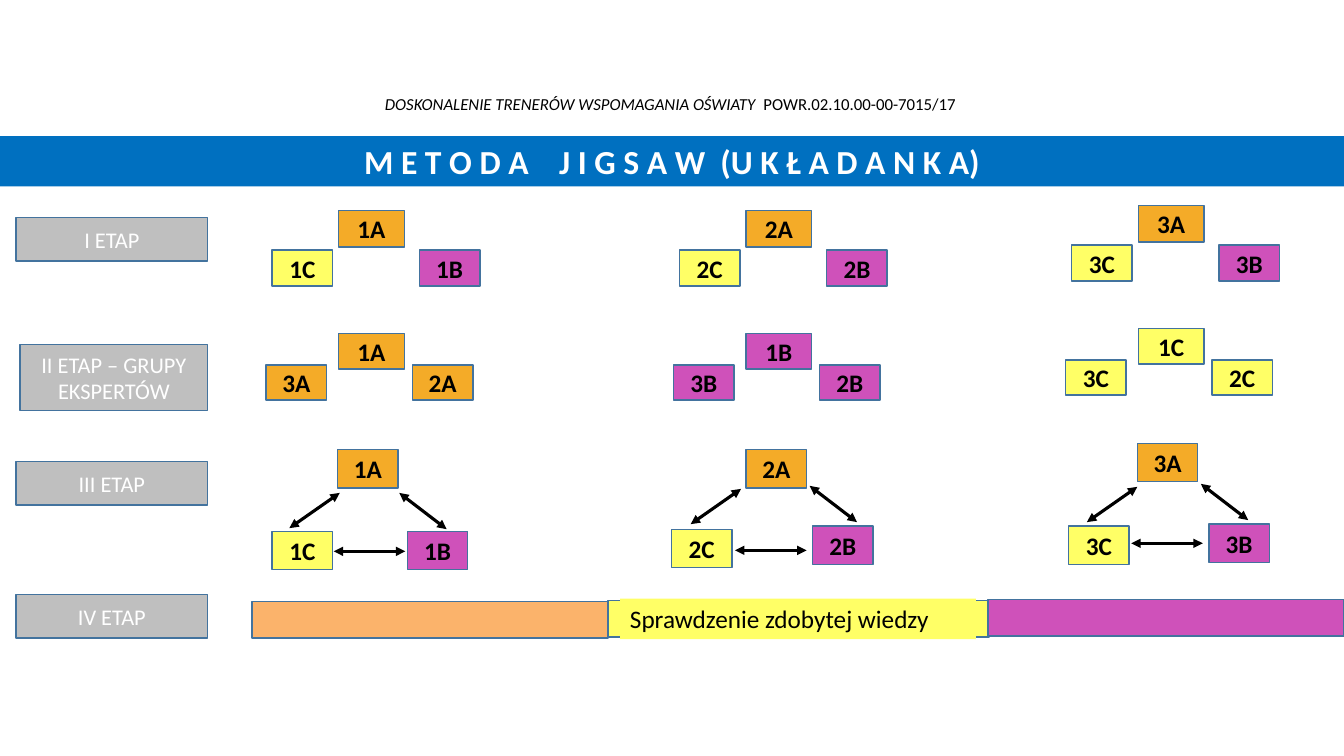
from lxml import etree
from pptx import Presentation
from pptx.dml.color import RGBColor
from pptx.enum import shapes, text
from pptx.oxml import ns
from pptx.util import Inches, Pt

BLACK = RGBColor(0x00, 0x00, 0x00)
WHITE = RGBColor(0xFF, 0xFF, 0xFF)
BLUE = RGBColor(0x00, 0x70, 0xC0)
OUTLINE = RGBColor(0x43, 0x73, 0x9E)
GREY = RGBColor(0xBF, 0xBF, 0xBF)
ORANGE = RGBColor(0xF4, 0xAB, 0x28)
PEACH = RGBColor(0xFB, 0xB3, 0x6B)
MAGENTA = RGBColor(0xCF, 0x51, 0xBA)
YELLOW = RGBColor(0xFF, 0xFF, 0x66)
LETTER_FILL = {"A": ORANGE, "B": MAGENTA, "C": YELLOW}

prs = Presentation()
prs.slide_width, prs.slide_height = Inches(13.33), Inches(7.5)
s = prs.slides.add_slide(prs.slide_layouts[6])


def add_box(x, y, w, h, fill, label="", size=18, color=BLACK, bold=False,
            outline=True, align=text.PP_ALIGN.CENTER):
    sp = s.shapes.add_shape(shapes.MSO_SHAPE.RECTANGLE, Inches(x), Inches(y), Inches(w), Inches(h))
    sp.shadow.inherit = False
    sp.fill.solid()
    sp.fill.fore_color.rgb = fill
    if outline:
        sp.line.color.rgb = OUTLINE
        sp.line.width = Pt(1)
    else:
        sp.line.fill.background()
    if label:
        tf = sp.text_frame
        tf.word_wrap = True
        tf.vertical_anchor = text.MSO_ANCHOR.MIDDLE
        tf.text = label
        p = tf.paragraphs[0]
        p.alignment = align
        f = p.runs[0].font
        f.name, f.size, f.bold, f.color.rgb = "Calibri", Pt(size), bold, color


def add_arrow(x1, y1, x2, y2):
    c = s.shapes.add_connector(shapes.MSO_CONNECTOR.STRAIGHT,
                               Inches(x1), Inches(y1), Inches(x2), Inches(y2))
    c.line.color.rgb = BLACK
    c.line.width = Pt(2.25)
    ln = c.line._get_or_add_ln()
    for end in ("a:headEnd", "a:tailEnd"):
        etree.SubElement(ln, ns.qn(end), type="triangle")
    etree.SubElement(c._element.spPr, ns.qn("a:effectLst"))


tb = s.shapes.add_textbox(Inches(0.92), Inches(0.88), Inches(11.46), Inches(0.3))
tf = tb.text_frame
tf.word_wrap = True
tf.vertical_anchor = text.MSO_ANCHOR.MIDDLE
p = tf.paragraphs[0]
p.alignment = text.PP_ALIGN.CENTER
for wording, italic in (("DOSKONALENIE TRENERÓW WSPOMAGANIA OŚWIATY  ", True),
                        ("POWR.02.10.00-00-7015/17", False)):
    r = p.add_run()
    r.text = wording
    r.font.name, r.font.size, r.font.italic = "Calibri", Pt(12), italic
    r.font.color.rgb = BLACK

add_box(0, 1.35, 13.33, 0.5, BLUE, "M E T O D A    J I G S A W  (U K Ł A D A N K A)",
        24, WHITE, True, outline=False)

for x, y, w, h, stage in ((0.16, 2.16, 1.9, 0.43, "I ETAP"),
                          (0.2, 3.42, 1.86, 0.65, "II ETAP – GRUPY EKSPERTÓW"),
                          (0.16, 4.58, 1.9, 0.43, "III ETAP"),
                          (0.16, 5.9, 1.9, 0.43, "IV ETAP")):
    add_box(x, y, w, h, GREY, stage, 16, WHITE)

for group, expert, dx, dy in (("1", "A", 0, 0), ("2", "B", 4.04, 0), ("3", "C", 7.93, -0.05)):
    for x, y, w, letter in ((2.7, 2.48, 0.6, "C"), (3.36, 2.09, 0.65, "A"), (4.16, 2.48, 0.6, "B")):
        add_box(x + dx, y + dy, w, 0.36, LETTER_FILL[letter], group + letter, bold=True)
    for x, y, w, number in ((2.64, 3.62, 0.6, "3"), (3.36, 3.31, 0.65, "1"), (4.09, 3.62, 0.6, "2")):
        add_box(x + dx, y + dy, w, 0.35, LETTER_FILL[expert], number + expert, bold=True)

returning = {
    "1": ((2.7, 5.27), (3.35, 4.46), (4.04, 5.27)),
    "2": ((6.66, 5.25), (7.4, 4.46), (8.06, 5.22)),
    "3": ((10.6, 5.22), (11.28, 4.4), (11.99, 5.2)),
}
for group, corners in returning.items():
    for letter, (x, y) in zip("CAB", corners):
        add_box(x, y, 0.6, 0.38, LETTER_FILL[letter], group + letter, bold=True)

for x, y in ((3.31, 5.47), (7.29, 5.46), (11.22, 5.39)):
    add_arrow(x, y, x + 0.71, y)
for x, y in ((3.96, 4.89), (8.03, 4.82), (11.91, 4.8)):
    add_arrow(x, y, x + 0.47, y + 0.36)
for x, y in ((2.87, 5.24), (6.85, 5.2), (10.78, 5.18)):
    add_arrow(x, y, x + 0.5, y - 0.35)

for x, y, w, fill in ((2.5, 5.97, 3.53, PEACH), (6.03, 5.96, 3.78, YELLOW), (9.8, 5.95, 3.53, MAGENTA)):
    add_box(x, y, w, 0.36, fill)
add_box(6.15, 5.94, 3.53, 0.4, YELLOW, "Sprawdzenie zdobytej wiedzy",
        outline=False, align=text.PP_ALIGN.LEFT)

prs.save("out.pptx")
